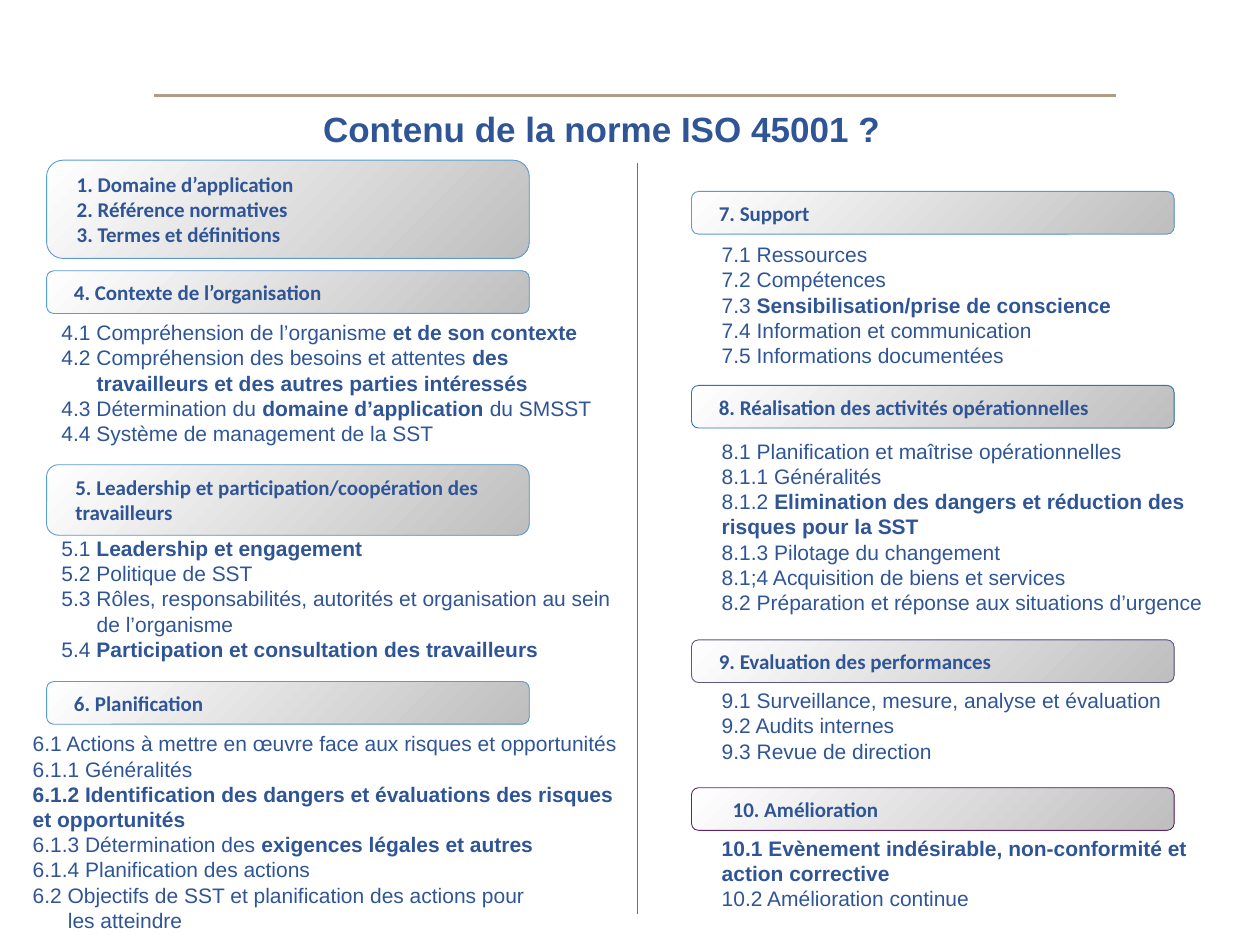
from dataclasses import dataclass

from lxml import etree
from pptx import Presentation
from pptx.dml.color import RGBColor
from pptx.enum.shapes import MSO_CONNECTOR, MSO_SHAPE
from pptx.enum.text import MSO_ANCHOR, PP_ALIGN
from pptx.oxml.ns import qn
from pptx.util import Cm, Pt

STRAIGHT = MSO_CONNECTOR.STRAIGHT
ROUNDED = MSO_SHAPE.ROUNDED_RECTANGLE
TOP, MIDDLE = MSO_ANCHOR.TOP, MSO_ANCHOR.MIDDLE
LEFT, CENTER = PP_ALIGN.LEFT, PP_ALIGN.CENTER


@dataclass(frozen=True)
class Theme:
    text: str = "2F5597"
    rule: str = "AF9D87"
    divider: str = "4472C4"
    shade_dark: str = "BFBFBF"
    shade_light: str = "FFFFFF"
    blue: str = "5B9BD5"
    deep_blue: str = "2E75B6"
    violet: str = "5C568D"
    purple: str = "65246A"
    title_size: int = 20
    text_size: int = 12
    line_pitch: float = 14.4
    list_font: str = "Arial"
    header_font: str = "Calibri"


theme = Theme()

deck = Presentation()
deck.slide_width, deck.slide_height = Cm(25.4), Cm(19.05)
page = deck.slides.add_slide(deck.slide_layouts[5])


def write_lines(frame, lines, font_name, bold=False):
    """One paragraph per line; ** toggles bold, a line break hangs under the text."""
    frame.word_wrap = True
    for index, line in enumerate(lines):
        para = frame.paragraphs[0] if index == 0 else frame.add_paragraph()
        para.alignment = LEFT
        para.line_spacing = Pt(theme.line_pitch)
        if "\n" in line:
            properties = para._p.get_or_add_pPr()
            properties.set("marL", str(Cm(0.71)))
            properties.set("indent", str(-Cm(0.71)))
        para.font.name = font_name
        para.font.size = Pt(theme.text_size)
        para.font.color.rgb = RGBColor.from_string(theme.text)
        para.font.bold = bold
        for part_index, part in enumerate(line.split("**")):
            for row_index, words in enumerate(part.split("\n")):
                if row_index:
                    para.add_line_break()
                if words:
                    span = para.add_run()
                    span.text = words
                    if part_index % 2:
                        span.font.bold = True


def add_rule(start, end, color, width):
    rule = page.shapes.add_connector(STRAIGHT, *map(Cm, start + end))
    rule.line.color.rgb = RGBColor.from_string(color)
    rule.line.width = Pt(width)
    etree.SubElement(rule._element.spPr, qn("a:effectLst"))


# Title and rules
add_rule((3.1, 1.93), (22.5, 1.93), theme.rule, 1.5)
add_rule((12.85, 3.28), (12.85, 18.42), theme.divider, 0.5)

title = page.shapes.title
title.left, title.top, title.width, title.height = Cm(0.38), Cm(2.03), Cm(23.5), Cm(1.52)
title.text_frame.text = "Contenu de la norme ISO 45001 ?"
title.text_frame.vertical_anchor = TOP
heading = title.text_frame.paragraphs[0]
heading.alignment = CENTER
heading.font.name = theme.list_font
heading.font.size = Pt(theme.title_size)
heading.font.bold = True
heading.font.color.rgb = RGBColor.from_string(theme.text)

# Clause lists: left, top, width, height, lines
clause_lists = [
    (0.99, 6.32, 11.2, 2.82, [
        "4.1 Compréhension de l’organisme **et de son contexte**",
        "4.2 Compréhension des besoins et attentes **des\n"
        "travailleurs et des autres parties intéressés**",
        "4.3 Détermination du **domaine d’application **du SMSST",
        "4.4 Système de management de la SST"]),
    (0.99, 10.67, 11.73, 2.82, [
        "5.1 **Leadership et engagement**",
        "5.2 Politique de SST",
        "5.3 Rôles, responsabilités, autorités et organisation au sein\n"
        "de l’organisme",
        "5.4 **Participation et consultation des travailleurs**"]),
    (0.41, 14.61, 12.45, 4.37, [
        "6.1 Actions à mettre en œuvre face aux risques et opportunités",
        "6.1.1 Généralités",
        "**6.1.2 Identification des dangers et évaluations des risques et opportunités**",
        "6.1.3 Détermination des **exigences légales et autres**",
        "6.1.4 Planification des actions",
        "6.2 Objectifs de SST et planification des actions pour\nles atteindre"]),
    (14.3, 4.75, 9.02, 2.82, [
        "7.1 Ressources",
        "7.2 Compétences",
        "7.3 **Sensibilisation/prise de conscience**",
        "7.4 Information et communication",
        "7.5 Informations documentées"]),
    (14.3, 8.71, 10.85, 3.84, [
        "8.1 Planification et maîtrise opérationnelles",
        "8.1.1 Généralités",
        "8.1.2 **Elimination des dangers et réduction des risques pour la SST**",
        "8.1.3 Pilotage du changement",
        "8.1;4 Acquisition de biens et services",
        "8.2 Préparation et réponse aux situations d’urgence"]),
    (14.3, 13.74, 10.69, 1.8, [
        "9.1 Surveillance, mesure, analyse et évaluation",
        "9.2 Audits internes",
        "9.3 Revue de direction"]),
    (14.3, 16.71, 11, 1.8, [
        "**10.1 Evènement indésirable, non-conformité et action corrective**",
        "10.2 Amélioration continue"]),
]
for *place, lines in clause_lists:
    box = page.shapes.add_textbox(*map(Cm, place))
    write_lines(box.text_frame, lines, theme.list_font)

# Chapter headers: left, top, height, text inset, outline, lines
left_column, right_column = 0.94, 13.94
headers = [
    (left_column, 3.23, 1.98, 0.51, theme.blue, [
        "1. Domaine d’application", "2. Référence normatives", "3. Termes et définitions"]),
    (left_column, 5.46, 0.86, 0.51, theme.blue, ["4. Contexte de l’organisation"]),
    (left_column, 9.37, 1.42, 0.51, theme.blue,
     ["5. Leadership et participation/coopération des travailleurs"]),
    (left_column, 13.74, 0.86, 0.51, theme.blue, ["6. Planification"]),
    (right_column, 3.86, 0.86, 0.51, theme.blue, ["7. Support"]),
    (right_column, 7.77, 0.86, 0.51, theme.deep_blue,
     ["8. Réalisation des activités opérationnelles"]),
    (right_column, 12.9, 0.86, 0.51, theme.violet, ["9. Evaluation des performances"]),
    (right_column, 15.88, 0.86, 0.79, theme.purple, ["10. Amélioration"]),
]
for left, top, height, inset, outline, lines in headers:
    header = page.shapes.add_shape(ROUNDED, Cm(left), Cm(top), Cm(9.73), Cm(height))
    header.shadow.inherit = False
    header.line.color.rgb = RGBColor.from_string(outline)
    header.line.width = Pt(0.5)

    # Shade radiating from the bottom right corner
    header.fill.gradient()
    shades = ((0.01, theme.shade_dark), (1, theme.shade_light))
    for stop, (position, color) in zip(header.fill.gradient_stops, shades):
        stop.position = position
        stop.color.rgb = RGBColor.from_string(color)
    gradient = header._element.spPr.find(qn("a:gradFill"))
    linear = gradient.find(qn("a:lin"))
    radial = etree.Element(qn("a:path"), path="circle")
    etree.SubElement(radial, qn("a:fillToRect"), l="100000", t="100000")
    gradient.replace(linear, radial)

    frame = header.text_frame
    frame.margin_left, frame.margin_right = Cm(inset), Cm(0.25)
    frame.margin_top = frame.margin_bottom = Cm(0.13)
    frame.vertical_anchor = MIDDLE
    write_lines(frame, lines, theme.header_font, bold=True)

deck.save("out.pptx")
